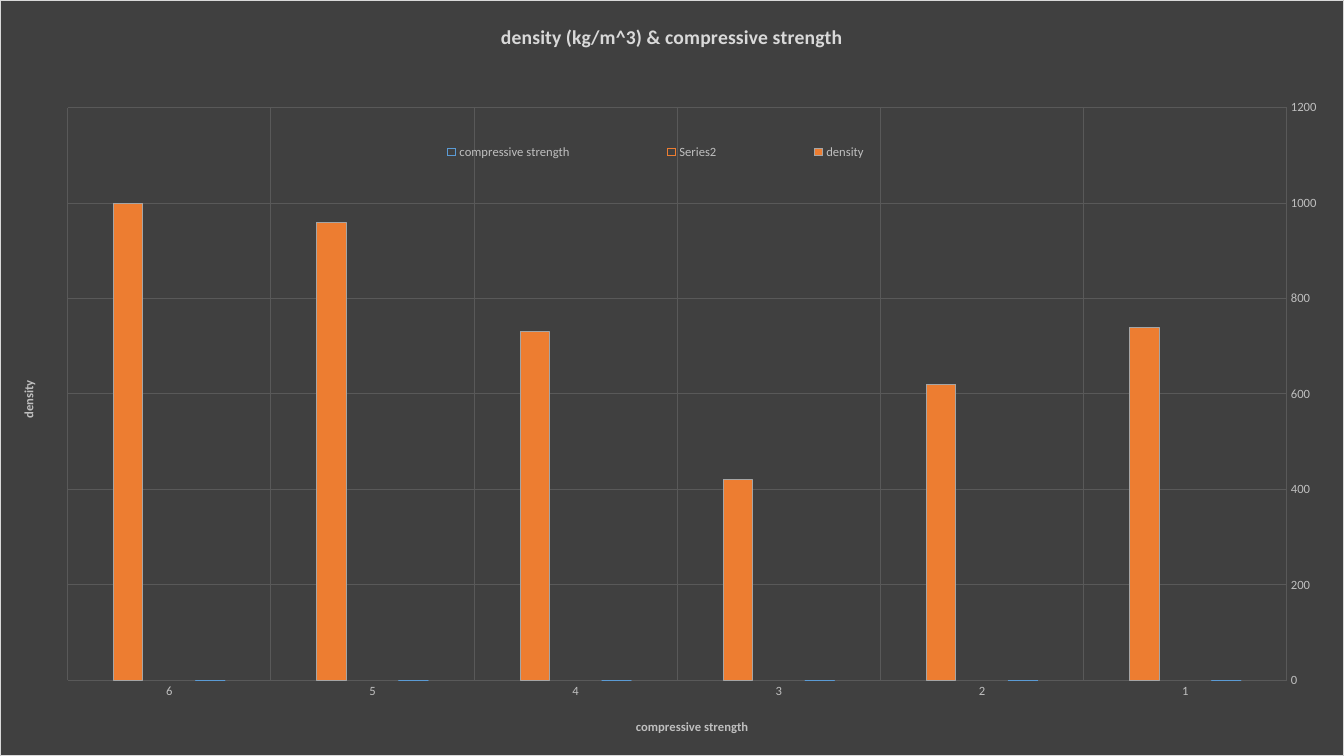
from lxml.etree import SubElement
from pptx import Presentation
from pptx.chart.data import CategoryChartData
from pptx.dml.color import RGBColor
from pptx.enum.chart import XL_CHART_TYPE as ChartType
from pptx.enum.chart import XL_LEGEND_POSITION as LegendPosition
from pptx.enum.chart import XL_TICK_MARK as TickMark
from pptx.oxml import parse_xml
from pptx.oxml.ns import nsdecls, qn
from pptx.util import Cm, Pt

BLACK = RGBColor(0x00, 0x00, 0x00)
WHITE = RGBColor(0xFF, 0xFF, 0xFF)
CHARCOAL = RGBColor(0x40, 0x40, 0x40)
GRID_GREY = RGBColor(0x59, 0x59, 0x59)
LABEL_GREY = RGBColor(0xBF, 0xBF, 0xBF)
BORDER_GREY = RGBColor(0xD9, 0xD9, 0xD9)
BAR_GREY = RGBColor(0xA5, 0xA5, 0xA5)
BLUE = RGBColor(0x5B, 0x9B, 0xD5)
ORANGE = RGBColor(0xED, 0x7D, 0x31)

SLIDE_WIDTH, SLIDE_HEIGHT = Cm(33.87), Cm(19.05)

# Name, values for samples 1 to 6, fill, outline
SERIES = [
    ("compressive strength", (0,) * 6, None, BLUE),
    ("Series2", (None,) * 6, None, ORANGE),
    ("density", (740, 620, 420, 730, 960, 1000), ORANGE, BAR_GREY),
]


def style_font(font, size, color, bold=False):
    font.name = "Calibri"
    font.size = Pt(size)
    font.bold = bold
    font.color.rgb = color


def style_line(line, color):
    line.color.rgb = color
    line.width = Pt(0.75)


def place(element, x, y, width=None, height=None, inner=False):
    """Set a manual layout in percent of the chart area."""
    old_layout = element.find(qn("c:layout"))
    if old_layout is not None:
        element.remove(old_layout)
    layout = parse_xml(f"<c:layout {nsdecls('c')}><c:manualLayout/></c:layout>")
    settings = [("xMode", "edge"), ("yMode", "edge")]
    if inner:
        settings.insert(0, ("layoutTarget", "inner"))
    for tag, percent in zip("xywh", (x, y, width, height)):
        if percent is not None:
            settings.append((tag, f"{percent / 100:.4f}"))
    for tag, value in settings:
        SubElement(layout[0], qn(f"c:{tag}")).set("val", value)
    overlay = element.find(qn("c:overlay"))
    if overlay is None:
        element.insert(0, layout)
    else:
        overlay.addprevious(layout)


def set_title(title, text, size, color, x, y):
    title.text_frame.text = text
    style_font(title.text_frame.paragraphs[0].runs[0].font, size, color, bold=True)
    place(title.element, x, y)


def style_axis(axis, title, x, y):
    axis.major_tick_mark = axis.minor_tick_mark = TickMark.NONE
    axis.format.line.fill.background()
    axis.has_major_gridlines = True
    style_line(axis.major_gridlines.format.line, GRID_GREY)
    style_font(axis.tick_labels.font, 9, LABEL_GREY)
    axis.has_title = True
    set_title(axis.axis_title, title, 9, LABEL_GREY, x, y)


def style_chart_area(chart):
    chart_area = parse_xml(
        f"<c:spPr {nsdecls('c', 'a')}>"
        f'<a:solidFill><a:srgbClr val="{CHARCOAL}"/></a:solidFill>'
        f'<a:ln w="{Pt(0.75)}"><a:solidFill><a:srgbClr val="{BORDER_GREY}"/>'
        "</a:solidFill></a:ln></c:spPr>")
    chart.element.find(qn("c:txPr")).addprevious(chart_area)


def style_series(plot):
    for series, (_, _, fill, outline) in zip(plot.series, SERIES):
        series.invert_if_negative = False
        style_line(series.format.line, outline)
        if fill is None:
            series.format.fill.background()
        else:
            series.format.fill.solid()
            series.format.fill.fore_color.rgb = fill


def add_density_chart(slide):
    samples = CategoryChartData()
    samples.categories = [str(number) for number in range(1, 7)]
    for name, values, _, _ in SERIES:
        samples.add_series(name, values)
    chart = slide.shapes.add_chart(ChartType.COLUMN_CLUSTERED, 0, 0,
                                   SLIDE_WIDTH, SLIDE_HEIGHT, samples).chart
    style_font(chart.font, 10, WHITE)
    style_chart_area(chart)
    chart.has_title = True
    set_title(chart.chart_title, "density (kg/m^3) & compressive strength",
              14, BORDER_GREY, 37, 2.6)

    # Bars
    plot = chart.plots[0]
    plot.vary_by_categories = False
    plot.gap_width = 315
    plot.overlap = -40
    style_series(plot)
    place(chart.element.find(".//" + qn("c:plotArea")),
          5, 14.2, 90.8, 75.85, inner=True)

    # Axes, with samples running from right to left
    strength_axis, density_axis = chart.category_axis, chart.value_axis
    style_axis(strength_axis, "compressive strength", 47.15, 94.75)
    strength_axis.reverse_order = True
    style_axis(density_axis, "density", 1.3, 50)
    density_axis.minimum_scale = 0
    density_axis.maximum_scale = 1200
    density_axis.major_unit = 200
    density_body = density_axis.axis_title.element.find(".//" + qn("a:bodyPr"))
    density_body.set("rot", "-5400000")
    density_body.set("vert", "horz")

    # Legend
    chart.has_legend = True
    legend = chart.legend
    legend.position = LegendPosition.TOP
    legend.include_in_layout = False
    style_font(legend.font, 9, LABEL_GREY)
    place(chart.element.find(".//" + qn("c:legend")), 26.3, 18.1, 45, 4)


def main():
    presentation = Presentation()
    presentation.slide_width = SLIDE_WIDTH
    presentation.slide_height = SLIDE_HEIGHT
    slide = presentation.slides.add_slide(presentation.slide_layouts[6])
    slide.background.fill.solid()
    slide.background.fill.fore_color.rgb = BLACK
    add_density_chart(slide)
    presentation.save("out.pptx")


if __name__ == "__main__":
    main()
